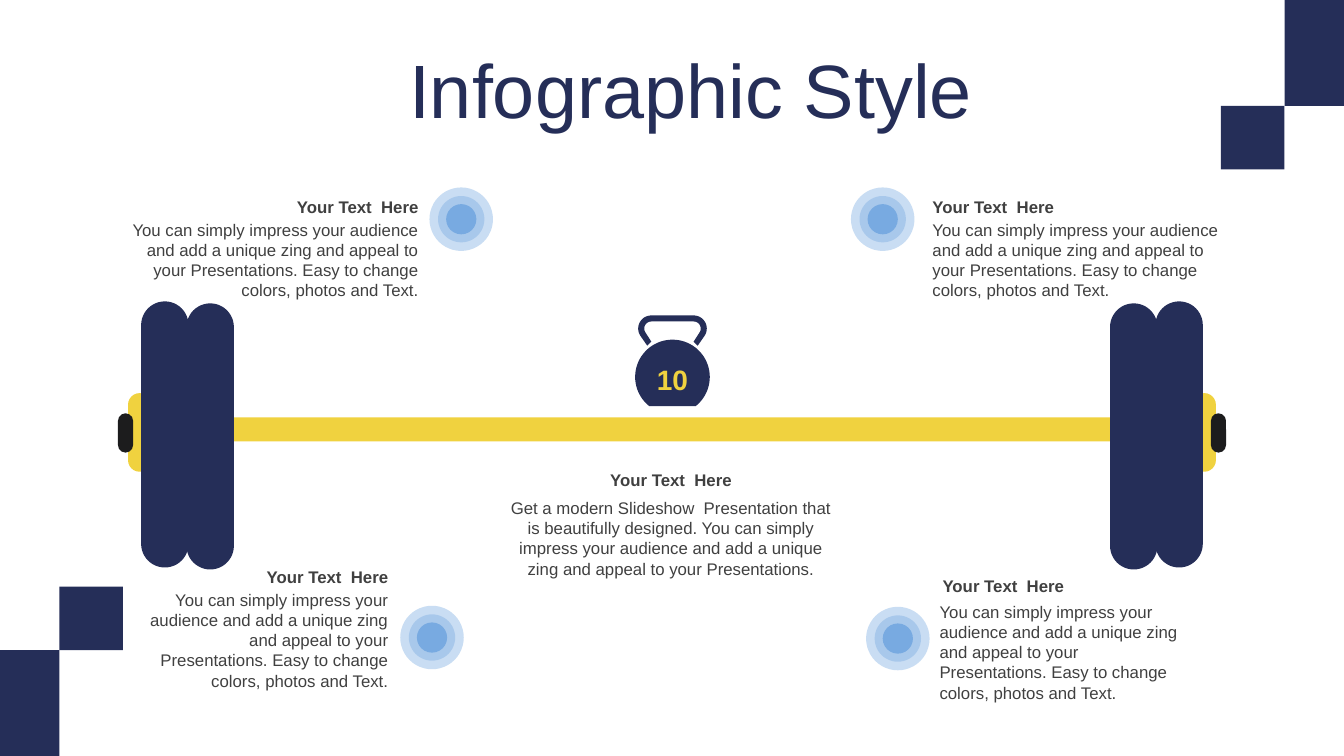
from dataclasses import dataclass
from math import asin, cos, degrees, radians, sin

from lxml import etree
from pptx import Presentation
from pptx.dml.color import RGBColor
from pptx.enum.shapes import MSO_SHAPE
from pptx.enum.text import MSO_ANCHOR, MSO_AUTO_SIZE, PP_ALIGN
from pptx.oxml.ns import qn
from pptx.util import Inches, Pt

RECT, ROUND, OVAL = MSO_SHAPE.RECTANGLE, MSO_SHAPE.ROUNDED_RECTANGLE, MSO_SHAPE.OVAL
LEFT, CENTER, RIGHT = PP_ALIGN.LEFT, PP_ALIGN.CENTER, PP_ALIGN.RIGHT
MIDDLE = MSO_ANCHOR.MIDDLE
GROW = MSO_AUTO_SIZE.SHAPE_TO_FIT_TEXT


@dataclass(frozen=True)
class Theme:
    """Colours, font and type sizes of the slide."""
    navy: str = "252E58"
    yellow: str = "F0D23F"
    black: str = "1C1C1D"
    blue: str = "78AAE1"
    text: str = "404040"
    font: str = "Arial"
    title: int = 54
    number: int = 20
    body: int = 12


T = Theme()
HEADING = "Your Text  Here"
IMPRESS = ("You can simply impress your audience and add a unique zing and appeal to your "
           "Presentations. Easy to change colors, photos and Text.")
MODERN = ("Get a modern Slideshow  Presentation that is beautifully designed. You can simply "
          "impress your audience and add a unique zing and appeal to your Presentations.")


def paint(shape, color, alpha=None):
    """Give a shape a plain fill with no line or shadow."""
    shape.shadow.inherit = False
    shape.line.fill.background()
    shape.fill.solid()
    shape.fill.fore_color.rgb = RGBColor.from_string(color)
    if alpha:
        clr = shape.fill._xPr.find(".//" + qn("a:srgbClr"))
        etree.SubElement(clr, qn("a:alpha")).set("val", str(alpha * 1000))


def block(shapes, kind, box, color, alpha=None):
    """Add a painted preset shape in a box given in inches."""
    shape = shapes.add_shape(kind, *map(Inches, box))
    paint(shape, color, alpha)
    if kind == ROUND:
        shape.adjustments[0] = 0.5
    return shape


def outline(s, left, top, points, color):
    """Add a closed freeform from points relative to an origin."""
    pts = [(Inches(left + x), Inches(top + y)) for x, y in points]
    builder = s.shapes.build_freeform(*pts[0])
    builder.add_line_segments(pts[1:], close=True)
    shape = builder.convert_to_shape()
    paint(shape, color)
    return shape


def arc(cx, cy, radius, start, end, steps=24):
    """Return points along a circular arc, angles in degrees."""
    angles = [radians(start + (end - start) * i / steps) for i in range(steps + 1)]
    return [(cx + radius * cos(a), cy - radius * sin(a)) for a in angles]


def style(p, text, size, color, align, bold=False):
    """Set the wording and format of a paragraph."""
    p.text = text
    p.alignment = align
    p.font.name, p.font.size, p.font.bold = T.font, Pt(size), bold
    p.font.color.rgb = RGBColor.from_string(color)


def label(s, box, text, align, bold=False):
    """Add a wrapped text box in body type."""
    tf = s.shapes.add_textbox(*map(Inches, box)).text_frame
    tf.word_wrap, tf.auto_size = True, GROW
    style(tf.paragraphs[0], text, T.body, T.text, align, bold)


def title(s, box, text):
    """Place the slide title."""
    sp = s.shapes.title
    sp.left, sp.top, sp.width, sp.height = map(Inches, box)
    tf = sp.text_frame
    tf.word_wrap, tf.vertical_anchor = True, MIDDLE
    p = tf.paragraphs[0]
    style(p, text, T.title, T.navy, CENTER)
    p.line_spacing, p.space_before = 0.9, Pt(10)


def corner(s, box, at_top):
    """Draw two stepped blocks in a slide corner box."""
    left, top, width, height = box
    tall_w, tall_h, side = 0.59, 1.05, 0.63
    if at_top:
        tall, small = (left + side, top), (left, top + tall_h)
    else:
        tall, small = (left, top + side), (left + tall_w, top)
    block(s.shapes, RECT, (*tall, tall_w, tall_h), T.navy)
    block(s.shapes, RECT, (*small, side, side), T.navy)


def target(s, left, top):
    """Draw three concentric discs."""
    group = s.shapes.add_group_shape()
    for size, alpha in ((0.63, 40), (0.46, 40), (0.3, None)):
        inset = (0.63 - size) / 2
        block(group.shapes, OVAL, (left + inset, top + inset, size, size), T.blue, alpha)


def weights(s, box, mirrored):
    """Draw the plates and caps at one end of the barbell."""
    left, top, width, height = box
    parts = ((0.1, 0.91, 0.23, 0.78, T.yellow), (0.23, 0, 0.47, 2.64, T.navy),
             (0.68, 0.02, 0.47, 2.64, T.navy), (0, 1.11, 0.15, 0.39, T.black))
    for dx, dy, w, h, color in parts:
        x = width - dx - w if mirrored else dx
        block(s.shapes, ROUND, (left + x, top + dy, w, h), color)


def kettlebell(s, box, number):
    """Draw the numbered kettlebell with its handle."""
    left, top, width, height = box
    middle, radius = left + width / 2, width / 2
    half = (arc(0.21, 0.13, 0.13, 90, -35) + [(0.25, 0.3), (0.21, 0.26)]
            + arc(0.21, 0.13, 0.07, -35, 90))
    outline(s, middle, top, half + [(-x, y) for x, y in reversed(half)], T.navy)
    center = 0.61
    cut = degrees(asin((height - center) / radius))
    ball = outline(s, middle, top, arc(0, center, radius, -cut, 180 + cut, 60), T.navy)
    tf = ball.text_frame
    tf.margin_left = tf.margin_right = tf.margin_bottom = 0
    tf.margin_top = Inches(0.12)
    tf.vertical_anchor, tf.word_wrap = MIDDLE, False
    style(tf.paragraphs[0], number, T.number, T.yellow, CENTER, True)


def callout(s, heading_box, body_box, text, align, disc=None):
    """Place a heading, its text and an optional target."""
    label(s, body_box, text, align)
    label(s, heading_box, HEADING, align, True)
    if disc:
        target(s, *disc)


def main():
    """Build and save the slide."""
    prs = Presentation()
    prs.slide_width, prs.slide_height = Inches(13.33), Inches(7.5)
    s = prs.slides.add_slide(prs.slide_layouts[5])
    corner(s, (0, 5.82, 1.22, 1.68), False)
    corner(s, (12.11, 0, 1.22, 1.68), True)
    block(s.shapes, RECT, (2.07, 4.14, 9.49, 0.24), T.yellow)
    title(s, (0.52, 0.54, 12.66, 0.79), "Infographic Style")
    callout(s, (4.96, 4.61, 3.39, 0.3), (4.96, 4.89, 3.39, 0.91), MODERN, CENTER)
    callouts = (
        ((1.14, 1.9), (1.14, 2.13, 3.11, 0.91), RIGHT, (4.26, 1.86)),
        ((0.84, 5.57), (1.3, 5.8, 2.65, 1.11), RIGHT, (3.97, 6.01)),
        ((9.15, 1.9), (9.15, 2.13, 3.11, 0.91), LEFT, (8.44, 1.86)),
        ((9.25, 5.66), (9.22, 5.92, 2.65, 1.11), LEFT, (8.59, 6.02)),
    )
    for heading_at, body_box, align, disc in callouts:
        callout(s, (*heading_at, 3.11, 0.3), body_box, IMPRESS, align, disc)
    weights(s, (1.17, 2.99, 1.15, 2.66), False)
    weights(s, (11.01, 2.99, 1.15, 2.66), True)
    kettlebell(s, (6.3, 3.13, 0.74, 0.9), "10")
    prs.save("out.pptx")


if __name__ == "__main__":
    main()
